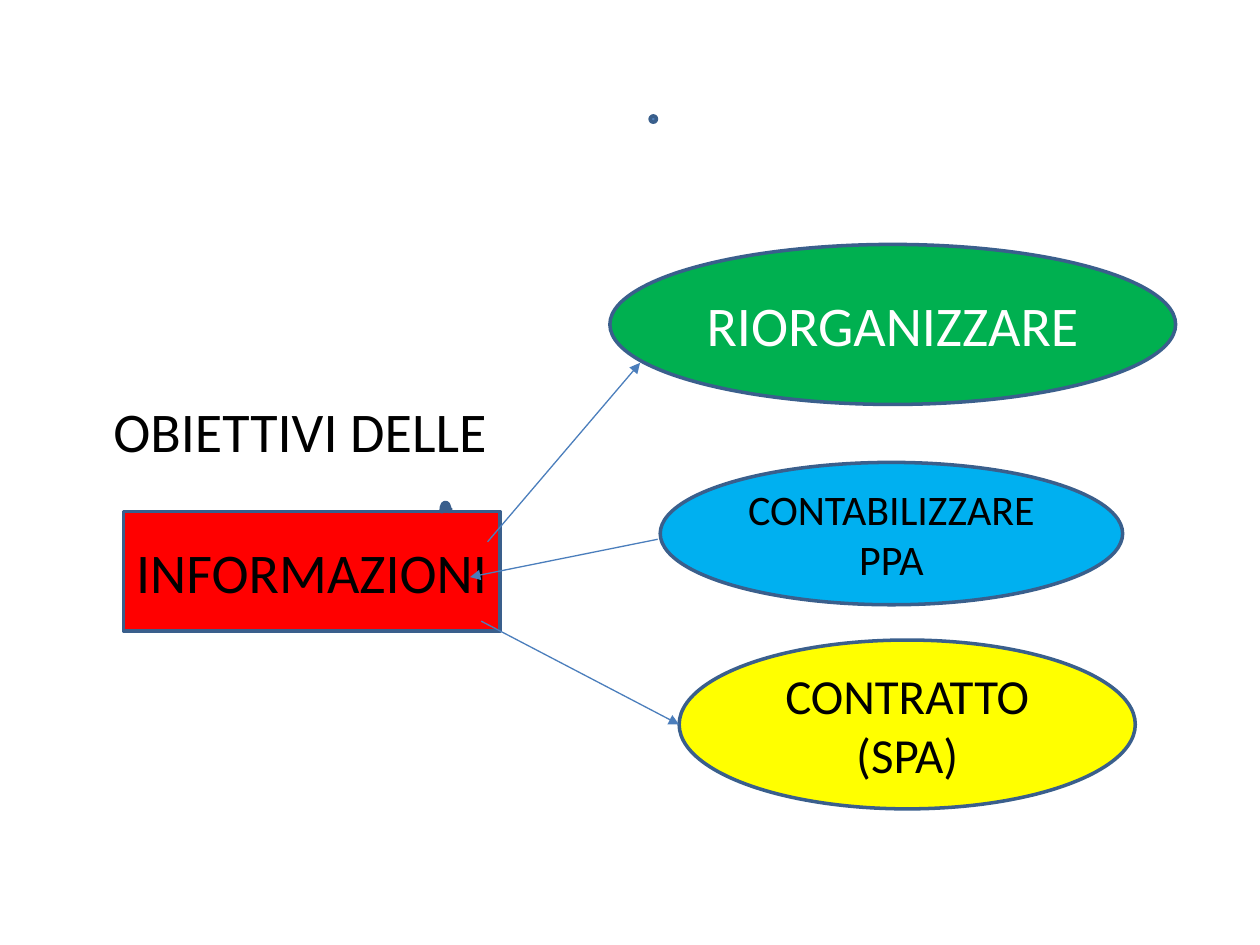
import pptx
import pptx.util
import pptx.dml.color
import pptx.enum.shapes
import pptx.enum.text
import pptx.oxml
import pptx.oxml.ns
from pptx.util import Inches

SHAPE = pptx.enum.shapes.MSO_SHAPE
ALIGN = pptx.enum.text.PP_ALIGN
MIDDLE = pptx.enum.text.MSO_ANCHOR.MIDDLE

THEME = {
    "font": "Calibri",
    "black": "000000", "white": "FFFFFF", "red": "FF0000", "green": "00B050",
    "blue": "00B0F0", "yellow": "FFFF00", "accent": "4F81BD",
    "outline": "3A5F8C", "arrow": "4B7EBC",
    "large": 32, "medium": 28, "small": 24,
    "outline_width": 2, "arrow_width": 0.75,
}

HEADING = ("OBIETTIVI DELLE", (0.8, 3.11, 3.3, 0.6))

# preset, (left, top, width, height), fill, lines, text colour, text size
NODES = [
    (SHAPE.RECTANGLE, (0.98, 4.06, 2.99, 0.95), "red",
     ["INFORMAZIONI"], "black", "large"),
    (SHAPE.OVAL, (4.84, 1.94, 4.49, 1.27), "green",
     ["RIORGANIZZARE"], "white", "large"),
    (SHAPE.OVAL, (5.24, 3.67, 3.67, 1.13), "blue",
     ["CONTABILIZZARE", "PPA"], "black", "small"),
    (SHAPE.OVAL, (5.39, 5.08, 3.62, 1.34), "yellow",
     ["CONTRATTO", "(SPA)"], "black", "medium"),
    (SHAPE.OVAL, (5.16, 0.92, 0.05, 0.05), "accent", [], "white", "small"),
    (SHAPE.CURVED_DOWN_ARROW, (3.5, 3.99, 0.08, 0.07), "accent",
     [], "white", "small"),
]

# start, end (the head is at the end)
ARROWS = [
    ((3.87, 4.3), (5.08, 2.88)),
    ((3.82, 4.93), (5.39, 5.75)),
    ((5.22, 4.28), (3.73, 4.58)),
]


def color(name):
    return pptx.dml.color.RGBColor.from_string(THEME[name])


def write_text(frame, lines, *, size="large", ink="black", align=ALIGN.CENTER):
    frame.word_wrap = True
    frame.vertical_anchor = MIDDLE
    frame.margin_left = frame.margin_right = Inches(0.1 if align == ALIGN.LEFT else 0.05)
    for index, line in enumerate(lines):
        paragraph = frame.add_paragraph() if index else frame.paragraphs[0]
        paragraph.alignment = align
        run = paragraph.add_run()
        run.text = line
        run.font.name = THEME["font"]
        run.font.size = pptx.util.Pt(THEME[size])
        run.font.color.rgb = color(ink)


def add_node(slide, preset, box, fill, lines, ink, size):
    node = slide.shapes.add_shape(preset, *map(Inches, box))
    node.shadow.inherit = False
    node.fill.solid()
    node.fill.fore_color.rgb = color(fill)
    node.line.color.rgb = color("outline")
    node.line.width = pptx.util.Pt(THEME["outline_width"])
    if lines:
        write_text(node.text_frame, lines, size=size, ink=ink)


def add_arrow(slide, start, end):
    arrow = slide.shapes.add_connector(
        pptx.enum.shapes.MSO_CONNECTOR.STRAIGHT, *map(Inches, start + end))
    arrow.line.color.rgb = color("arrow")
    arrow.line.width = pptx.util.Pt(THEME["arrow_width"])
    head = pptx.oxml.parse_xml(
        f'<a:tailEnd {pptx.oxml.ns.nsdecls("a")} type="triangle"/>')
    arrow.line._get_or_add_ln().append(head)
    arrow._element.spPr.append(
        pptx.oxml.parse_xml(f'<a:effectLst {pptx.oxml.ns.nsdecls("a")}/>'))


def main():
    deck = pptx.Presentation()
    deck.slide_width, deck.slide_height = Inches(10), Inches(7.5)
    slide = deck.slides.add_slide(deck.slide_layouts.get_by_name("Title Only"))

    heading, box = HEADING
    title = slide.shapes.title
    title.left, title.top, title.width, title.height = map(Inches, box)
    write_text(title.text_frame, [heading], align=ALIGN.LEFT)

    for node in NODES:
        add_node(slide, *node)
    for start, end in ARROWS:
        add_arrow(slide, start, end)
    deck.save("out.pptx")


if __name__ == "__main__":
    main()
